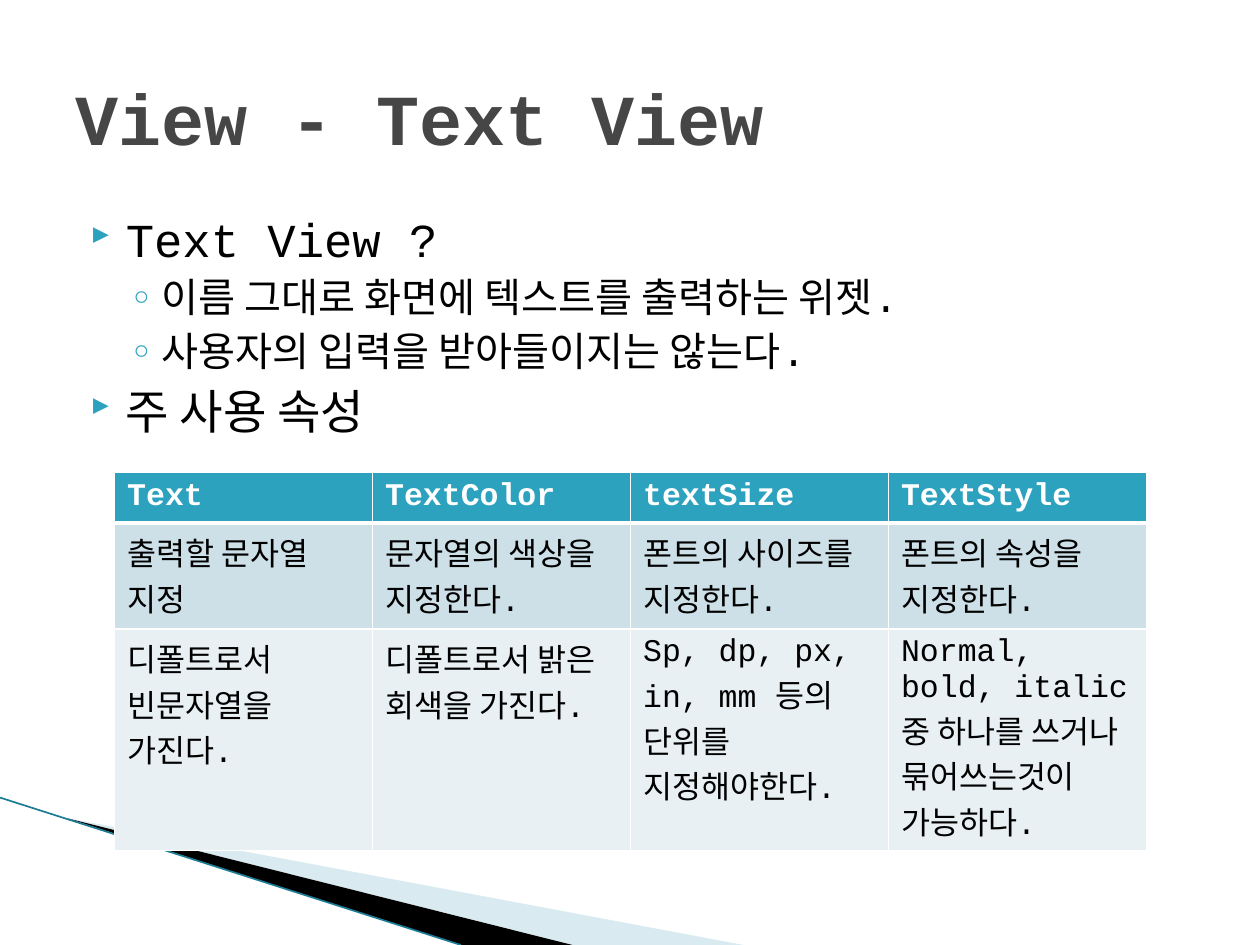
from lxml.etree import SubElement
from pptx import Presentation
from pptx.dml.color import RGBColor
from pptx.enum.text import MSO_ANCHOR
from pptx.oxml import parse_xml
from pptx.oxml.ns import nsdecls, qn
from pptx.util import Inches, Pt

WIDE, HIGH = 10, 7.5
FONT = "Courier New"
TEAL, WHITE, BLACK, GRAY = "2DA2BF", "FFFFFF", "000000", "464646"
# size, left indent, hanging indent, space before, mark, mark font, mark percent
LEVELS = [
    (27, 0.4, 0.28, 4, "}", "Wingdings 3", 68),
    (23, 0.68, 0.25, 3.2, "◦", "Verdana", 100),
]
BODY = [
    (0, "Text View ?"),
    (1, "이름 그대로 화면에 텍스트를 출력하는 위젯."),
    (1, "사용자의 입력을 받아들이지는 않는다."),
    (0, "주 사용 속성"),
]
ROWS = [
    ["Text", "TextColor", "textSize", "TextStyle"],
    ["출력할 문자열 지정", "문자열의 색상을 지정한다.",
     "폰트의 사이즈를 지정한다.", "폰트의 속성을 지정한다."],
    ["디폴트로서 빈문자열을 가진다.", "디폴트로서 밝은 회색을 가진다.",
     "Sp, dp, px, in, mm 등의 단위를 지정해야한다.",
     "Normal, bold, italic 중 하나를 쓰거나 묶어쓰는것이 가능하다."],
]
TALL = [0.38, 0.84, 1.76]
FILLS = [TEAL, "CDE0E8", "E8F0F4"]


def rgb(code):
    return RGBColor.from_string(code)


def style(para, size, color, bold=False):
    for run in para.runs:
        font = run.font
        font.name, font.size, font.bold = FONT, Pt(size), bold
        font.color.rgb = rgb(color)


def add_box(slide, box):
    frame = slide.shapes.add_textbox(*map(Inches, box)).text_frame
    frame.word_wrap = True
    return frame


def add_wedge(slide, box, points, color, alpha=100):
    """Fill a polygon whose points are shares of the box."""
    left, top, wide, high = box
    spots = [(Inches(left + x * wide), Inches(top + y * high))
             for x, y in points]
    pen = slide.shapes.build_freeform(*spots[0], scale=1)
    pen.add_line_segments(spots[1:], close=True)
    shape = pen.convert_to_shape()
    shape.shadow.inherit = False
    shape.fill.solid()
    shape.fill.fore_color.rgb = rgb(color)
    shape.line.fill.background()
    if alpha < 100:
        tone = shape.fill._xPr.find(".//" + qn("a:srgbClr"))
        SubElement(tone, qn("a:alpha"), val=str(alpha * 1000))


def add_corner(slide, box):
    left, top, wide, high = box
    start = (0.09, 0.14)
    add_wedge(slide, box, [start, (1, 1), (0.77, 1)], "A0CBDC", 40)
    add_wedge(slide, box, [start, (0.77, 1), (0.62, 1)], BLACK)
    line = slide.shapes.add_connector(
        1, Inches(left), Inches(top),
        Inches(left + 0.62 * wide), Inches(top + high))
    line.line.color.rgb = rgb("1C7C93")
    line.line.width = Pt(0.95)
    SubElement(line._element.spPr, qn("a:effectLst"))


def add_title(slide, box):
    frame = add_box(slide, box)
    frame.vertical_anchor = MSO_ANCHOR.MIDDLE
    frame.text = "View - Text View"
    style(frame.paragraphs[0], 41, GRAY, True)


def add_bullet(para, level):
    size, left, hang, _, mark, face, share = LEVELS[level]
    props = para._p.get_or_add_pPr()
    props.set("marL", str(Inches(left)))
    props.set("indent", str(-Inches(hang)))
    tone = SubElement(props, qn("a:buClr"))
    SubElement(tone, qn("a:srgbClr"), val=TEAL)
    SubElement(props, qn("a:buSzPct"), val=str(share * 1000))
    SubElement(props, qn("a:buFont"), typeface=face)
    SubElement(props, qn("a:buChar"), char=mark)
    style(para, size, BLACK)


def add_body(slide, box):
    frame = add_box(slide, box)
    frame.text = "\n".join(text for _, text in BODY)
    for i, (para, (level, _)) in enumerate(zip(frame.paragraphs, BODY)):
        para.level = level
        add_bullet(para, level)
        if i:
            para.space_before = Pt(LEVELS[level][3])


def add_edges(cell, bottom):
    props = cell._tc.get_or_add_tcPr()
    for i, (side, width) in enumerate(zip("LRTB", (1, 1, 1, bottom))):
        props.insert(i, parse_xml(
            f'<a:ln{side} {nsdecls("a")} w="{Pt(width)}"><a:solidFill>'
            f'<a:srgbClr val="{WHITE}"/></a:solidFill></a:ln{side}>'))


def add_grid(slide, box):
    table = slide.shapes.add_table(
        len(ROWS), len(ROWS[0]), *map(Inches, box)).table
    for r, row in enumerate(ROWS):
        table.rows[r].height = Inches(TALL[r])
        head = r == 0
        for c, text in enumerate(row):
            cell = table.cell(r, c)
            cell.text = text
            cell.fill.solid()
            cell.fill.fore_color.rgb = rgb(FILLS[r])
            add_edges(cell, 3 if head else 1)
            style(cell.text_frame.paragraphs[0], 18,
                  WHITE if head else BLACK, head)


def main():
    deck = Presentation()
    deck.slide_width, deck.slide_height = Inches(WIDE), Inches(HIGH)
    slide = deck.slides.add_slide(deck.slide_layouts[6])
    side = 0.05 * WIDE
    add_corner(slide, (0, 6.33, 0.59 * WIDE, HIGH - 6.33))
    add_body(slide, (side, 1.62, WIDE - 2 * side, 4.95))
    add_title(slide, (side, 0.3, WIDE - 2 * side, 1.25))
    add_grid(slide, (0.91, 3.75, 8.19, sum(TALL)))
    deck.save("out.pptx")


if __name__ == "__main__":
    main()
